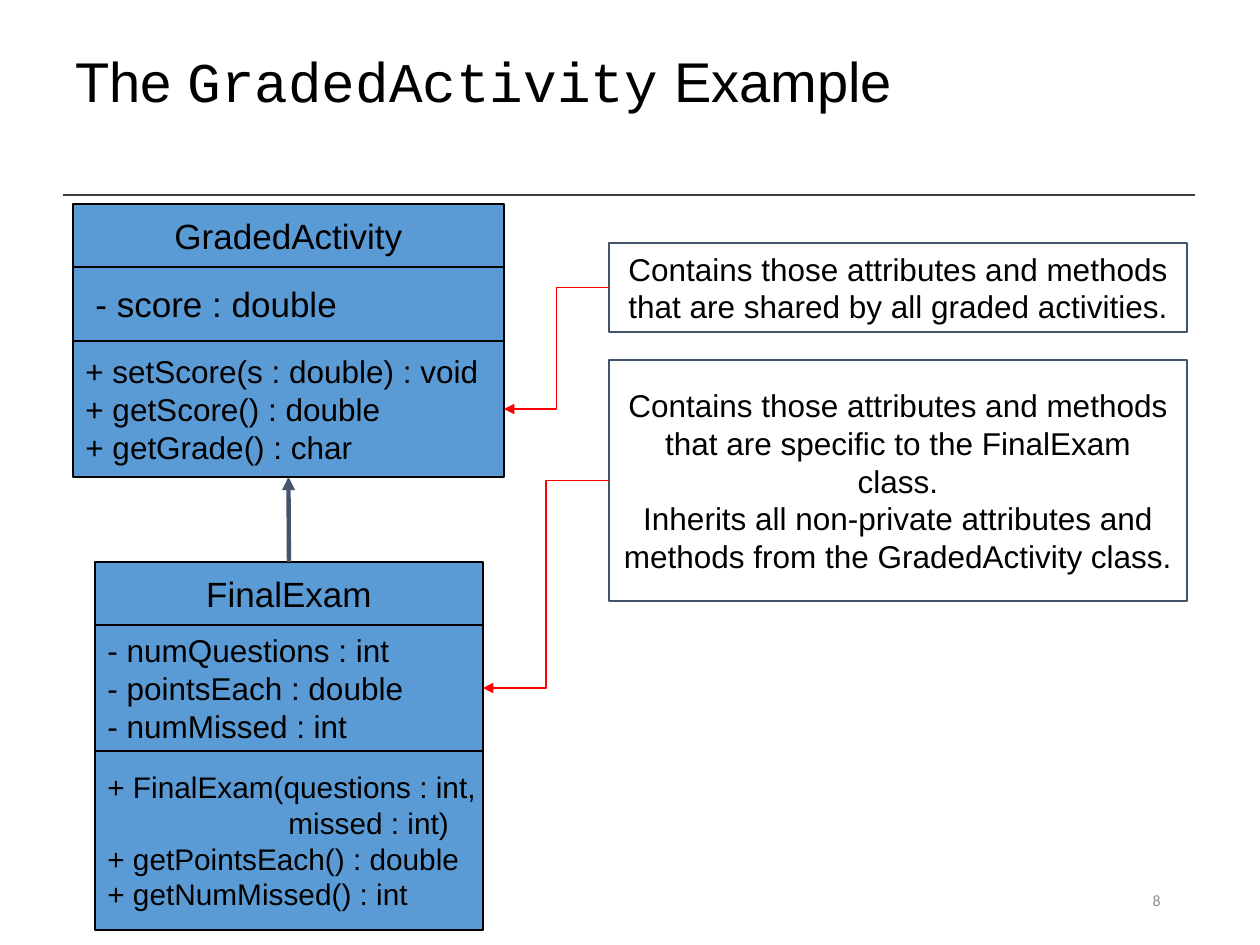
from dataclasses import dataclass

from pptx import Presentation
from pptx import util as u
from pptx.dml.color import RGBColor
from pptx.enum import shapes, text
from pptx.oxml.ns import qn
from lxml import etree

PX = 914400 / 126  # EMU in one px
TOP, LEFT, BOTTOM, RIGHT = range(4)  # connection sites of a rectangle


def px(n):
    return u.Emu(round(n * PX))


@dataclass(frozen=True)
class Theme:
    ink: str = "000000"
    fill: str = "5B9BD5"
    slate: str = "44546A"
    rule: str = "404040"
    pointer: str = "FF0000"
    muted: str = "8C8C8C"
    font: str = "Arial"
    code_font: str = "Courier New"
    number_font: str = "Calibri"
    title: int = 32
    heading: int = 20
    body: int = 18
    small: int = 17
    number: int = 9


class Deck:
    def __init__(self, theme):
        self.t = theme
        self.prs = Presentation()
        self.prs.slide_width, self.prs.slide_height = px(1260), px(945)
        self.s = self.prs.slides.add_slide(self.prs.slide_layouts[6])

    def style(self, p, size, align, color=None, font=None):
        p.alignment = align
        p.font.size = u.Pt(size)
        p.font.name = font or self.t.font
        p.font.color.rgb = RGBColor.from_string(color or self.t.ink)

    def textbox(self, x, y, w, h, runs, size, align=text.PP_ALIGN.LEFT, color=None):
        """One paragraph made of (text, font) runs."""
        tf = self.s.shapes.add_textbox(px(x), px(y), px(w), px(h)).text_frame
        tf.word_wrap = True
        tf.vertical_anchor = text.MSO_ANCHOR.MIDDLE
        p = tf.paragraphs[0]
        self.style(p, size, align, color)
        p.line_spacing = 0.9
        for words, font in runs:
            r = p.add_run()
            r.text, r.font.name = words, font

    def box(self, x, y, w, h, lines, size, align, line, fill=None, indents=None):
        """A framed rectangle; indents maps a line number to its indent in px."""
        sp = self.s.shapes.add_shape(shapes.MSO_SHAPE.RECTANGLE, px(x), px(y), px(w), px(h))
        sp.shadow.inherit = False
        if fill:
            sp.fill.solid()
            sp.fill.fore_color.rgb = RGBColor.from_string(fill)
        else:
            sp.fill.background()
        sp.line.color.rgb = RGBColor.from_string(line)
        sp.line.width = u.Pt(0.75)
        tf = sp.text_frame
        tf.word_wrap = True
        tf.vertical_anchor = text.MSO_ANCHOR.MIDDLE
        if align == text.PP_ALIGN.LEFT:
            tf.margin_right = 0
        for i, words in enumerate(lines):
            p = tf.paragraphs[0] if i == 0 else tf.add_paragraph()
            p.text = words
            self.style(p, size, align)
            if indents and i in indents:
                p._p.get_or_add_pPr().set("marL", str(px(indents[i])))
        return sp

    def uml_class(self, x, y, w, parts):
        """Stacked compartments of (height, lines, size, indents); the first is the name."""
        boxes = []
        for h, lines, size, indents in parts:
            align = text.PP_ALIGN.LEFT if boxes else text.PP_ALIGN.CENTER
            boxes.append(self.box(x, y, w, h, lines, size, align,
                                  self.t.ink, self.t.fill, indents))
            y += h
        return boxes

    def note(self, y, h, lines):
        return self.box(609, y, 578, h, lines, self.t.body,
                        text.PP_ALIGN.CENTER, self.t.slate)

    def line(self, x1, y1, x2, y2, color, width, kind=shapes.MSO_CONNECTOR.STRAIGHT):
        c = self.s.shapes.add_connector(kind, px(x1), px(y1), px(x2), px(y2))
        c.line.color.rgb = RGBColor.from_string(color)
        c.line.width = u.Pt(width)
        etree.SubElement(c._element.spPr, qn("a:effectLst"))
        return c

    def arrow(self, start, start_site, end, end_site, color, width, kind):
        c = self.line(0, 0, 1, 1, color, width, kind)
        c.begin_connect(start, start_site)
        c.end_connect(end, end_site)
        etree.SubElement(c.line._get_or_add_ln(), qn("a:tailEnd"), type="triangle")


def main():
    t = Theme()
    d = Deck(t)

    # Title and rule
    d.line(63, 195, 1195, 195, t.rule, 1)
    d.textbox(63, 32, 1071, 105,
              [("The ", t.font), ("GradedActivity", t.code_font), (" Example", t.font)],
              t.title)

    # Class diagrams
    graded = d.uml_class(73, 204, 431, [
        (63, ["GradedActivity"], t.heading, None),
        (74, ["- score : double"], t.heading, {0: 10}),
        (136, ["+ setScore(s : double) : void", "+ getScore() : double",
               "+ getGrade() : char"], t.body, None),
    ])
    final = d.uml_class(95, 562, 388, [
        (63, ["FinalExam"], t.heading, None),
        (126, ["- numQuestions : int", "- pointsEach : double",
               "- numMissed : int"], t.body, None),
        (179, ["+ FinalExam(questions : int,", "missed : int)",
               "+ getPointsEach() : double", "+ getNumMissed() : int"], t.small, {1: 181}),
    ])

    # Explanatory notes
    shared = d.note(243, 89, [
        "Contains those attributes and methods that are shared by all graded activities."])
    specific = d.note(360, 241, [
        "Contains those attributes and methods that are specific to the FinalExam class.",
        "Inherits all non-private attributes and methods from the GradedActivity class."])

    # Inheritance arrow and note pointers
    d.arrow(final[0], TOP, graded[-1], BOTTOM, t.slate, 2.5, shapes.MSO_CONNECTOR.STRAIGHT)
    for note, target in ((shared, graded[2]), (specific, final[1])):
        d.arrow(note, LEFT, target, RIGHT, t.pointer, 1, shapes.MSO_CONNECTOR.ELBOW)

    # Slide number
    d.textbox(890, 876, 283, 50, [("8", t.number_font)], t.number,
              text.PP_ALIGN.RIGHT, t.muted)

    d.prs.save("out.pptx")


if __name__ == "__main__":
    main()
